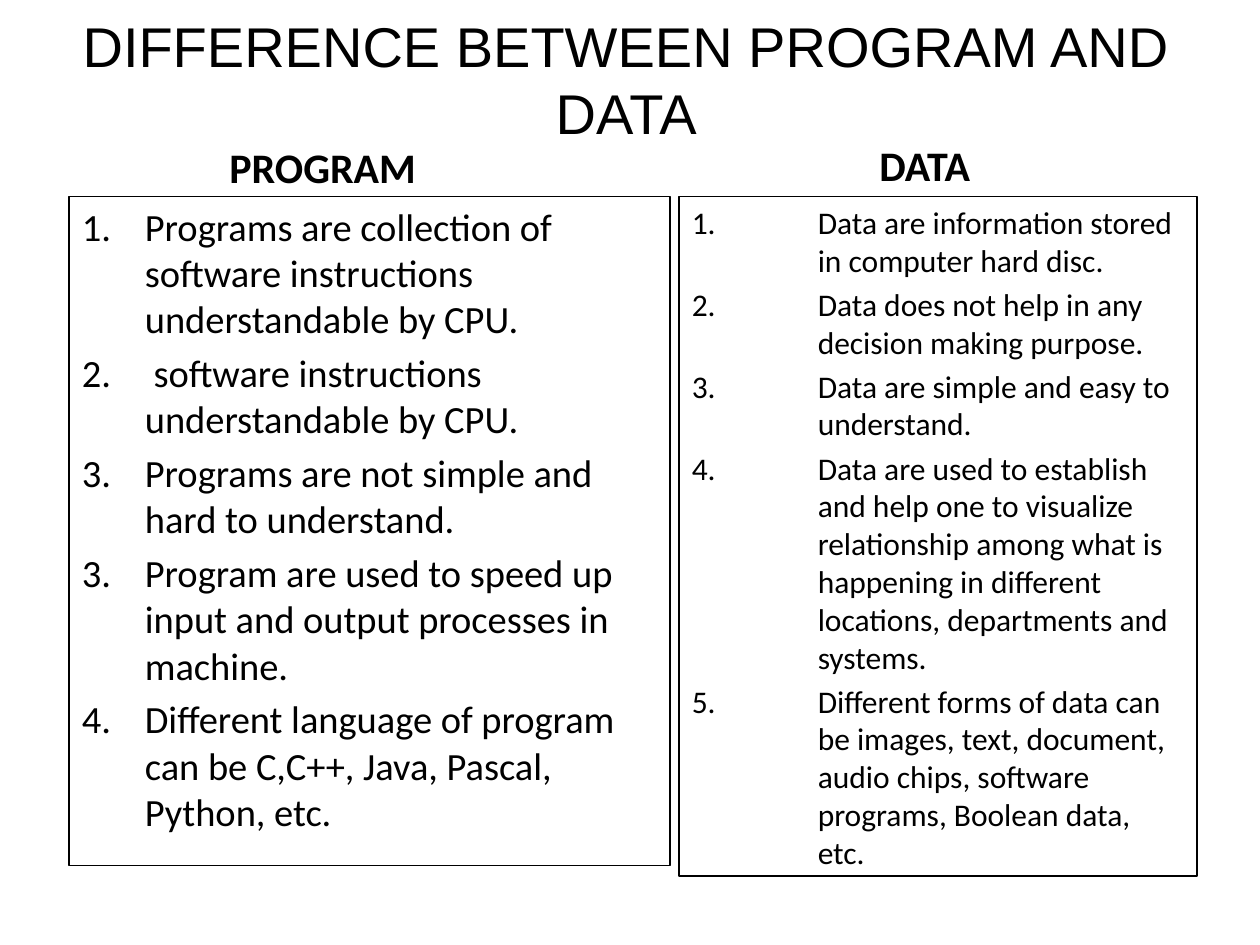
"""Build a slide that compares programs with data in two numbered lists."""
from dataclasses import dataclass

import lxml.etree
import pptx
import pptx.dml.color
import pptx.enum.text
import pptx.oxml.ns
import pptx.util


@dataclass(frozen=True)
class Theme:
    ink: pptx.dml.color.RGBColor = pptx.dml.color.RGBColor(0, 0, 0)
    title_font: str = "Arial"
    body_font: str = "Calibri"
    title_size: float = 32
    heading_size: float = 24
    border: float = 1


@dataclass(frozen=True)
class Area:
    """Position and size in percent of the slide."""
    left: float
    top: float
    width: float
    height: float


@dataclass(frozen=True)
class Item:
    text: str
    numbered: bool = True


@dataclass(frozen=True)
class Column:
    heading: str
    heading_area: Area
    items: tuple[Item, ...]
    list_area: Area
    text_size: float
    indent: float
    heading_slot: int
    list_slot: int


THEME = Theme()
WIDTH = pptx.util.Inches(10)
HEIGHT = pptx.util.Inches(7.5)
COMPARISON_LAYOUT = 4
TITLE = "DIFFERENCE BETWEEN PROGRAM AND DATA"
TITLE_AREA = Area(4.7, 0, 90, 16.67)

COLUMNS = (
    Column(
        "PROGRAM", Area(17.2, 13.6, 33.6, 7.33),
        (
            Item("Programs are collection of software instructions understandable by CPU."),
            Item(" software instructions understandable by CPU."),
            Item("3.\tPrograms are not simple and hard to understand.", numbered=False),
            Item("Program are used to speed up input and output processes in machine."),
            Item("Different language of program can be C,C++, Java, Pascal, Python, etc."),
        ),
        Area(5.5, 20.8, 47.7, 70.8), text_size=22, indent=0.5,
        heading_slot=1, list_slot=2,
    ),
    Column(
        "DATA", Area(68.8, 11.47, 20.3, 9.33),
        (
            Item("Data are information stored in computer hard disc."),
            Item("Data does not help in any decision making purpose."),
            Item("Data are simple and easy to understand."),
            Item("Data are used to establish and help one to visualize relationship among "
                 "what is happening in different locations, departments and systems."),
            Item("Different forms of data can be images, text, document, audio chips, "
                 "software programs, Boolean data, etc."),
        ),
        Area(53.9, 20.8, 41.1, 71.87), text_size=18, indent=1,
        heading_slot=3, list_slot=4,
    ),
)


def place(placeholder, area: Area, anchor: pptx.enum.text.MSO_ANCHOR) -> None:
    """Move a placeholder to its area and fix its text frame."""
    placeholder.left = round(WIDTH * area.left / 100)
    placeholder.top = round(HEIGHT * area.top / 100)
    placeholder.width = round(WIDTH * area.width / 100)
    placeholder.height = round(HEIGHT * area.height / 100)
    frame = placeholder.text_frame
    frame.word_wrap = True
    frame.auto_size = pptx.enum.text.MSO_AUTO_SIZE.NONE
    frame.vertical_anchor = anchor


def style(paragraph, font: str, size: float, bold: bool = False) -> None:
    """Give every run of a paragraph the same look."""
    for run in paragraph.runs:
        run.font.name = font
        run.font.size = pptx.util.Pt(size)
        run.font.bold = bold
        run.font.color.rgb = THEME.ink


def number(paragraph, item: Item, indent: float) -> None:
    """Set the hanging indent and the automatic number of a list item."""
    properties = paragraph._p.get_or_add_pPr()
    hang = pptx.util.Inches(indent)
    properties.set("marL", str(hang))
    properties.set("indent", str(-hang))
    tag = "a:buAutoNum" if item.numbered else "a:buNone"
    bullet = lxml.etree.SubElement(properties, pptx.oxml.ns.qn(tag))
    if item.numbered:
        bullet.set("type", "arabicPeriod")


def add_column(slide, column: Column) -> None:
    """Fill one heading and the bordered list under it."""
    heading = slide.placeholders[column.heading_slot]
    place(heading, column.heading_area, pptx.enum.text.MSO_ANCHOR.BOTTOM)
    heading.text_frame.text = column.heading
    heading.text_frame.paragraphs[0].space_before = pptx.util.Pt(0)
    style(heading.text_frame.paragraphs[0], THEME.body_font, THEME.heading_size, bold=True)

    points = slide.placeholders[column.list_slot]
    place(points, column.list_area, pptx.enum.text.MSO_ANCHOR.TOP)
    points.line.color.rgb = THEME.ink
    points.line.width = pptx.util.Pt(THEME.border)
    points.text_frame.text = "\n".join(item.text for item in column.items)
    for paragraph, item in zip(points.text_frame.paragraphs, column.items):
        number(paragraph, item, column.indent)
        style(paragraph, THEME.body_font, column.text_size)
    points.text_frame.paragraphs[0].space_before = pptx.util.Pt(0)


def main() -> None:
    """Create the presentation and save it."""
    deck = pptx.Presentation()
    deck.slide_width, deck.slide_height = WIDTH, HEIGHT
    slide = deck.slides.add_slide(deck.slide_layouts[COMPARISON_LAYOUT])
    title = slide.shapes.title
    place(title, TITLE_AREA, pptx.enum.text.MSO_ANCHOR.MIDDLE)
    title.text_frame.text = TITLE
    title.text_frame.paragraphs[0].alignment = pptx.enum.text.PP_ALIGN.CENTER
    style(title.text_frame.paragraphs[0], THEME.title_font, THEME.title_size)
    for column in COLUMNS:
        add_column(slide, column)
    deck.save("out.pptx")


if __name__ == "__main__":
    main()
